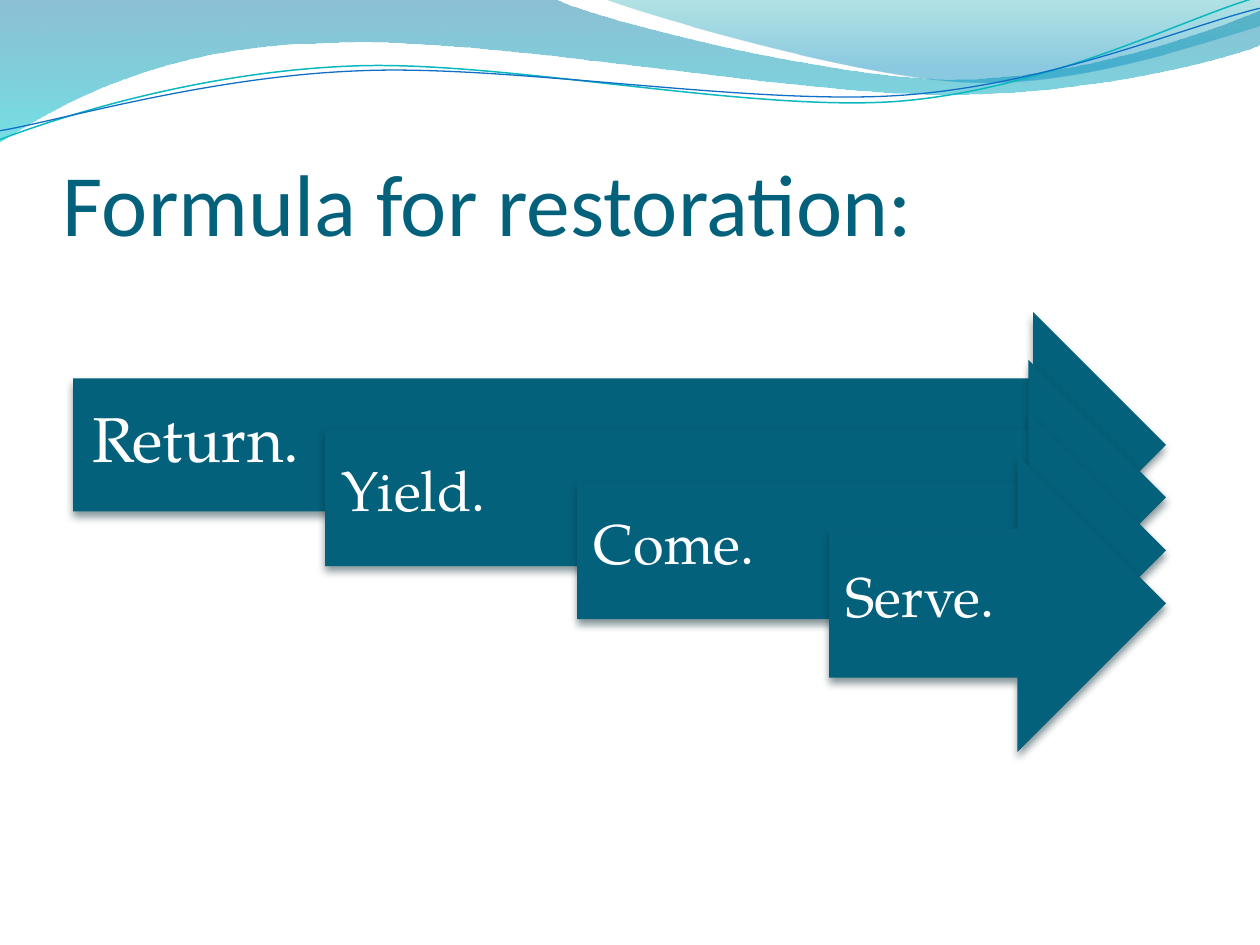
from lxml.etree import SubElement
from pptx import Presentation
from pptx.dml.color import RGBColor
from pptx.enum.shapes import MSO_SHAPE as SHAPE
from pptx.enum.text import MSO_ANCHOR as ANCHOR
from pptx.oxml.ns import qn
from pptx.util import Pt

EMU_PER_PX = 914400 / 126
SLIDE_W, SLIDE_H = 1260, 945

DEEP_TEAL = RGBColor(0x04, 0x61, 0x7B)
WHITE = RGBColor(0xFF, 0xFF, 0xFF)
BAND_BLUE = RGBColor(0x00, 0x74, 0xA1)
BAND_CYAN = RGBColor(0x00, 0xC6, 0xCF)
SAIL_GREEN = RGBColor(0x00, 0xA1, 0xA9)
SAIL_BLUE = RGBColor(0x00, 0x8B, 0xBF)
LINE_CYAN = RGBColor(0x0A, 0xB8, 0xBF)
LINE_BLUE = RGBColor(0x0F, 0x6F, 0xC6)
SHADOW = RGBColor(0x00, 0x23, 0x2C)

# Wave outlines: two numbers are a straight step, six are a Bezier step
BAND = [(0, 0), (554, -1), (600, 21, 837, 79, 955, 79),
        (1075, 79, 1207, 33, 1260, 11), (1261, 45),
        (1238, 55, 1096, 96, 940, 94), (784, 94, 481, 35, 324, 43),
        (163, 45, 58, 105, -1, 142)]
SAIL = [(604, -1), (641, 14, 859, 78, 969, 82),
        (1079, 87, 1211, 40, 1260, 26), (1260, 0)]
# The two lines are drawn level and then tilted
UPPER_LINE = [(-3, 110), (58, 90, 199, 52, 350, 53),
              (499, 53, 745, 118, 896, 114), (1048, 109, 1184, 45, 1260, 27)]
LOWER_LINE = [(-2, 101), (57, 94, 207, 57, 357, 58),
              (509, 58, 750, 112, 902, 108), (1052, 104, 1188, 52, 1262, 38)]
LINE_TILT = 357.3

# Arrows: label, top, height, text size, left and top inset
ARROWS = [("Return.", 312, 266, 36, 19), ("Yield.", 360, 275, 32, 17),
          ("Come.", 413, 275, 32, 17), ("Serve.", 455, 297, 32, 16)]
ARROW_LEFT, ARROW_STEP, ARROW_TIP = 73, 252, 1166


def px(n):
    return round(n * EMU_PER_PX)


def set_attrs(obj, values):
    for name, value in values.items():
        setattr(obj, name, value)


def add_outline(slide, steps, close):
    """Build the outline from its nodes, then bend the Bezier steps."""
    nodes = [(px(step[-2]), px(step[-1])) for step in steps]
    builder = slide.shapes.build_freeform(*nodes[0])
    builder.add_line_segments(nodes[1:], close=close)
    sp = builder.convert_to_shape()
    sp.shadow.inherit = False
    lines = list(sp._element.spPr.iter(qn("a:lnTo")))
    for line, step in zip(lines, steps[1:]):
        if len(step) == 2:
            continue
        line.tag = qn("a:cubicBezTo")
        for i, (x, y) in enumerate((step[:2], step[2:4])):
            pt = SubElement(line, qn("a:pt"), x=str(px(x) - sp.left),
                            y=str(px(y) - sp.top))
            line.insert(i, pt)
    return sp


def add_wave(slide, steps, stops):
    sp = add_outline(slide, steps, close=True)
    sp.line.fill.background()
    sp.fill.gradient()
    sp.fill.gradient_angle = 270  # top to bottom
    for stop, (position, color, _) in zip(sp.fill.gradient_stops, stops):
        stop.position = position
        stop.color.rgb = color
    for clr, (_, _, opacity) in zip(sp._element.spPr.iter(qn("a:srgbClr")), stops):
        SubElement(clr, qn("a:alpha"), val=str(opacity * 1000))


def add_wave_line(slide, steps, color, width):
    sp = add_outline(slide, steps, close=False)
    sp.rotation = LINE_TILT
    sp.fill.background()
    sp.line.color.rgb = color
    sp.line.width = Pt(width)


def add_text(slide, box, text, font, frame, spacing=None):
    sp = slide.shapes.add_textbox(*map(px, box))
    tf = sp.text_frame
    set_attrs(tf, {"word_wrap": True, **frame})
    p = tf.paragraphs[0]
    set_attrs(p, spacing or {})
    r = p.add_run()
    r.text = text
    name, size, color = font
    set_attrs(r.font, {"name": name, "size": Pt(size)})
    r.font.color.rgb = color


def margins(left, top, right, bottom):
    return {"margin_left": px(left), "margin_top": px(top),
            "margin_right": px(right), "margin_bottom": px(bottom)}


def add_shadow(sp):
    sp.shadow.inherit = False
    effects = sp._element.spPr.find(qn("a:effectLst"))
    shadow = SubElement(effects, qn("a:outerShdw"), blurRad=str(Pt(4.5)),
                        dist=str(Pt(3)), dir="5400000", rotWithShape="0")
    clr = SubElement(shadow, qn("a:srgbClr"), val=str(SHADOW))
    SubElement(clr, qn("a:alpha"), val="48000")


def add_arrow(slide, left, top, height, label, size, inset):
    width = ARROW_TIP - left
    sp = slide.shapes.add_shape(SHAPE.RIGHT_ARROW,
                                *map(px, (left, top, width, height)))
    sp.fill.solid()
    sp.fill.fore_color.rgb = DEEP_TEAL
    sp.line.fill.background()
    add_shadow(sp)
    # The label fills the shaft, which is half as high as the arrow
    add_text(slide, (left, top + height / 4, width - height / 4, height / 2),
             label, ("TeX Gyre Pagella", size, WHITE),
             {"vertical_anchor": ANCHOR.MIDDLE, **margins(inset, inset, 35, 25)},
             {"line_spacing": 0.9, "space_after": Pt(round(size * 0.35))})


def main():
    prs = Presentation()
    set_attrs(prs, {"slide_width": px(SLIDE_W), "slide_height": px(SLIDE_H)})
    slide = prs.slides.add_slide(prs.slide_layouts[6])

    # Wave decoration
    add_wave(slide, BAND, [(0, BAND_BLUE, 45), (1, BAND_CYAN, 55)])
    add_wave(slide, SAIL, [(0, SAIL_GREEN, 30), (0.8, SAIL_BLUE, 45)])
    add_wave_line(slide, UPPER_LINE, LINE_CYAN, 0.85)
    add_wave_line(slide, LOWER_LINE, LINE_BLUE, 0.75)

    # Title
    add_text(slide, (63, 96, 1134, 158), "Formula for restoration:",
             ("Calibri", 50, DEEP_TEAL),
             {"vertical_anchor": ANCHOR.BOTTOM, **margins(0, 6, 0, 0)})

    # Staggered arrows
    for i, (label, top, height, size, inset) in enumerate(ARROWS):
        add_arrow(slide, ARROW_LEFT + i * ARROW_STEP, top, height,
                  label, size, inset)

    prs.save("out.pptx")


if __name__ == "__main__":
    main()
